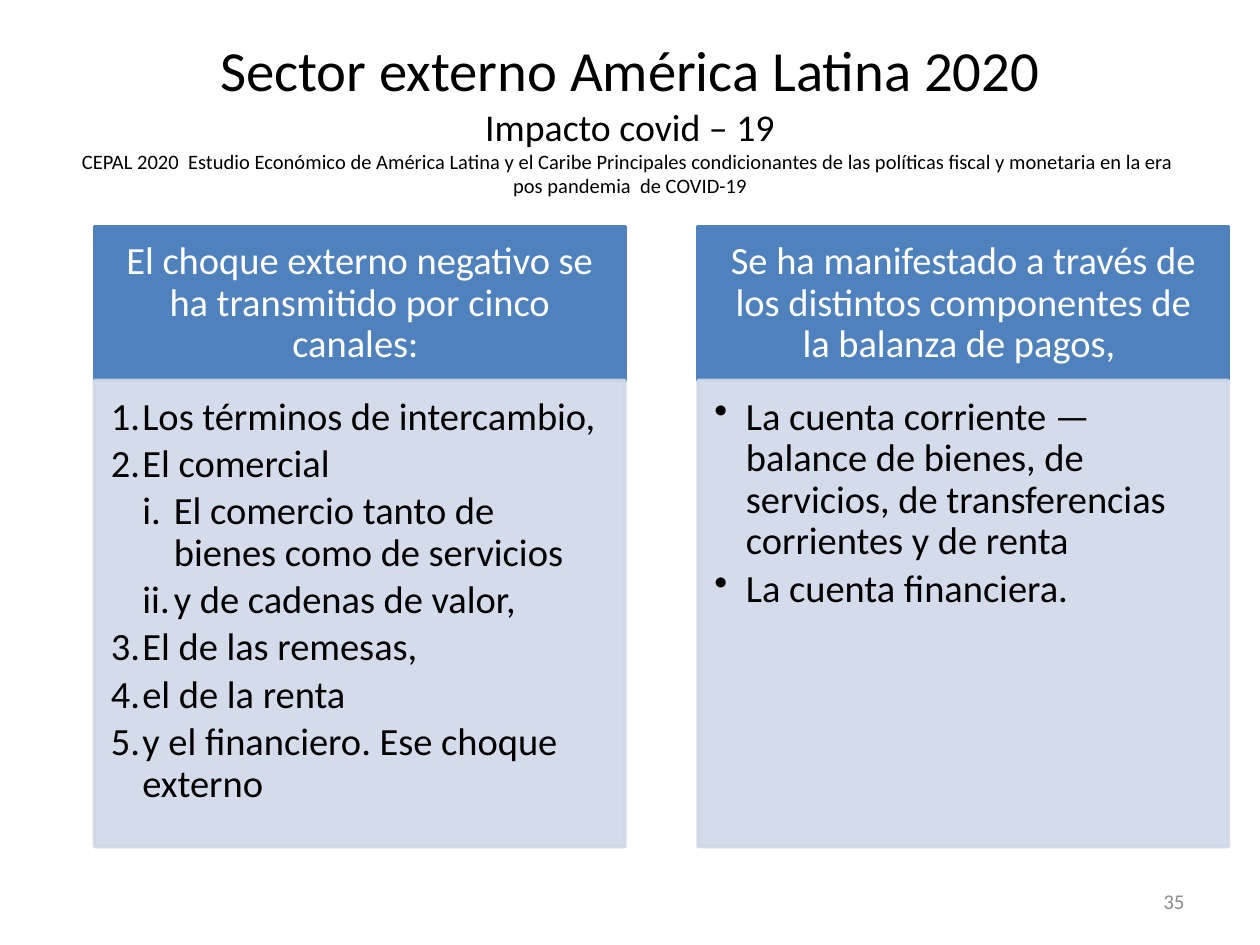
from dataclasses import dataclass

from pptx import Presentation
from pptx.dml.color import RGBColor
from pptx.enum.shapes import MSO_SHAPE as Shape
from pptx.enum.text import MSO_ANCHOR as Anchor, MSO_AUTO_SIZE as AutoSize, PP_ALIGN as Align
from pptx.oxml.ns import qn
from pptx.util import Inches, Pt
from lxml.etree import SubElement


@dataclass(frozen=True)
class Theme:
    """Colours, font and type sizes of the slide."""
    font: str = "Calibri"
    text: str = "000000"
    header: str = "4F81BD"
    header_text: str = "FFFFFF"
    body: str = "D0D8E8"
    number: str = "8C8C8C"
    title_size: float = 32.4
    subtitle_size: float = 21.6
    source_size: float = 11.7
    column_size: float = 22
    number_size: float = 12


THEME = Theme()
TITLE = (
    ("Sector externo América Latina 2020", THEME.title_size),
    ("Impacto covid – 19", THEME.subtitle_size),
    ("CEPAL 2020  Estudio Económico de América Latina y el Caribe Principales "
     "condicionantes de las políticas fiscal y monetaria en la era  pos pandemia  "
     "de COVID-19", THEME.source_size),
)
NUMBERS = {1: ("buAutoNum", "type", "arabicPeriod"), 2: ("buAutoNum", "type", "romanLcPeriod")}
DOTS = {1: ("buChar", "char", "•")}
COLUMNS = (
    ("El choque externo negativo se ha transmitido por cinco canales: ", NUMBERS, (
        (1, "Los términos de intercambio,"),
        (1, "El comercial"),
        (2, "El comercio tanto de bienes como de servicios"),
        (2, "y de cadenas de valor,"),
        (1, "El de las remesas,"),
        (1, "el de la renta"),
        (1, "y el financiero. Ese choque externo"),
    )),
    ("Se ha manifestado a través de los distintos componentes de la balanza de pagos, ", DOTS, (
        (1, "La cuenta corriente —balance de bienes, de servicios, de transferencias "
            "corrientes y de renta"),
        (1, "La cuenta financiera."),
    )),
)


def add_run(paragraph, text, size, color):
    """Append a run in the theme font."""
    run = paragraph.add_run()
    run.text = text
    run.font.name = THEME.font
    run.font.size = Pt(size)
    run.font.color.rgb = RGBColor.from_string(color)


def set_frame(frame, anchor, insets=(0.1, 0.05, 0.1, 0.05)):
    """Set wrapping, anchor and insets (left, top, right, bottom)."""
    frame.word_wrap = True
    frame.auto_size = AutoSize.NONE
    frame.vertical_anchor = anchor
    frame.margin_left, frame.margin_top, frame.margin_right, frame.margin_bottom = map(
        Inches, insets)


def add_panel(slide, box, color, opacity=100):
    """Add a rectangle with matching fill and outline."""
    shape = slide.shapes.add_shape(Shape.RECTANGLE, *map(Inches, box))
    shape.shadow.inherit = False
    shape.line.width = Pt(2)
    for fill in (shape.fill, shape.line.fill):
        fill.solid()
        fill.fore_color.rgb = RGBColor.from_string(color)
    if opacity < 100:
        for node in shape.element.spPr.iter(qn("a:srgbClr")):
            SubElement(node, qn("a:alpha"), val=str(opacity * 1000))
    return shape


def set_bullet(paragraph, level, bullet):
    """Give a paragraph its list level, hanging indent and bullet."""
    paragraph.level = level
    tag, attribute, value = bullet
    properties = paragraph._p.get_or_add_pPr()
    properties.set("marL", str(Inches(0.25 * level)))
    properties.set("indent", str(Inches(-0.25)))
    SubElement(properties, qn(f"a:{tag}"), {attribute: value})


def add_title(slide, box):
    """Place the three-line title in its placeholder."""
    title = slide.shapes.title
    title.left, title.top, title.width, title.height = map(Inches, box)
    set_frame(title.text_frame, Anchor.MIDDLE)
    paragraph = title.text_frame.paragraphs[0]
    paragraph.alignment = Align.CENTER
    for index, (text, size) in enumerate(TITLE):
        if index:
            paragraph.add_line_break()
        add_run(paragraph, text, size, THEME.text)


def add_column(slide, box, heading, bullets, items):
    """Build a header panel with a list panel below it."""
    left, top, width, height = box
    header_height = 1.22
    header = add_panel(slide, (left, top, width, header_height), THEME.header)
    set_frame(header.text_frame, Anchor.MIDDLE, (0.17, 0.1, 0.17, 0.1))
    paragraph = header.text_frame.paragraphs[0]
    paragraph.alignment = Align.CENTER
    paragraph.line_spacing = 0.9
    add_run(paragraph, heading, THEME.column_size, THEME.header_text)

    body = add_panel(slide, (left, top + header_height, width, height - header_height),
                     THEME.body, opacity=90)
    frame = body.text_frame
    set_frame(frame, Anchor.TOP, (0.13, 0.13, 0.17, 0.19))
    for index, (level, text) in enumerate(items):
        paragraph = frame.add_paragraph() if index else frame.paragraphs[0]
        paragraph.alignment = Align.LEFT
        paragraph.line_spacing = 0.9
        paragraph.space_after = Pt(0.15 * THEME.column_size)
        set_bullet(paragraph, level, bullets[level])
        add_run(paragraph, text, THEME.column_size, THEME.text)


def add_columns(slide, box):
    """Spread the columns evenly across the box."""
    left, top, width, height = box
    column_width = 4.21
    step = (width - column_width) / (len(COLUMNS) - 1)
    for index, column in enumerate(COLUMNS):
        add_column(slide, (left + index * step, top, column_width, height), *column)


def add_page_number(slide, box):
    """Write the page number at the right of the box."""
    frame = slide.shapes.add_textbox(*map(Inches, box)).text_frame
    set_frame(frame, Anchor.MIDDLE)
    paragraph = frame.paragraphs[0]
    paragraph.alignment = Align.RIGHT
    add_run(paragraph, "35", THEME.number_size, THEME.number)


def main():
    """Build and save the slide."""
    presentation = Presentation()
    presentation.slide_width, presentation.slide_height = Inches(10), Inches(7.5)
    slide = presentation.slides.add_slide(presentation.slide_layouts.get_by_name("Title Only"))
    add_title(slide, (0.5, 0.3, 9, 1.25))
    add_columns(slide, (0.75, 1.8, 9, 4.92))
    add_page_number(slide, (7.17, 6.95, 2.33, 0.4))
    presentation.save("out.pptx")


if __name__ == "__main__":
    main()
